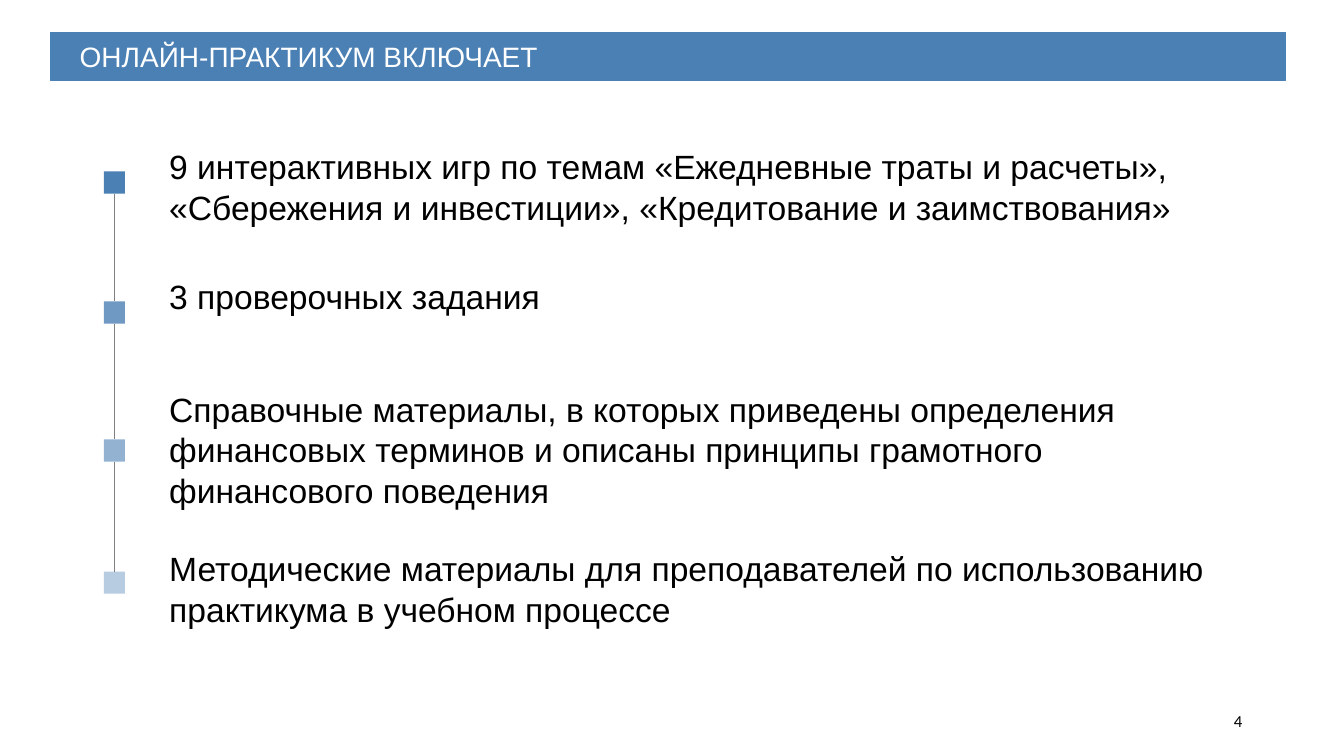
from lxml import etree
from pptx import Presentation
from pptx.dml.color import RGBColor
from pptx.enum.shapes import MSO_CONNECTOR, MSO_SHAPE
from pptx.enum.text import MSO_ANCHOR, MSO_AUTO_SIZE, PP_ALIGN
from pptx.oxml.ns import qn
from pptx.util import Inches, Pt

BLUE = RGBColor(0x4B, 0x80, 0xB5)
GRAY = RGBColor(0x80, 0x80, 0x80)
WHITE = RGBColor(0xFF, 0xFF, 0xFF)
BLACK = RGBColor(0, 0, 0)

RECTANGLE = MSO_SHAPE.RECTANGLE
STRAIGHT = MSO_CONNECTOR.STRAIGHT
LEFT, RIGHT = PP_ALIGN.LEFT, PP_ALIGN.RIGHT
TOP, MIDDLE = MSO_ANCHOR.TOP, MSO_ANCHOR.MIDDLE
NO_AUTOFIT = MSO_AUTO_SIZE.NONE
TITLE_ONLY_LAYOUT = 5
TOP_SIDE, BOTTOM_SIDE = 0, 2

MARKER_WIDTH, MARKER_HEIGHT = 0.21, 0.22
TEXT_OFFSET = 0.55

# Marker top, text top, text height, marker opacity in percent, wording
ITEMS = [
    (1.7, 1.4, 0.91, 100,
     "9 интерактивных игр по темам «Ежедневные траты и расчеты», "
     "«Сбережения и инвестиции», «Кредитование и заимствования»"),
    (2.99, 2.69, 0.5, 80, "3 проверочных задания"),
    (4.36, 3.81, 1.31, 60,
     "Справочные материалы, в которых приведены определения финансовых "
     "терминов и описаны принципы грамотного финансового поведения"),
    (5.67, 5.39, 0.91, 40,
     "Методические материалы для преподавателей по использованию "
     "практикума в учебном процессе"),
]


def write_text(shape, text, size, color, font="Arial", align=LEFT, anchor=TOP):
    frame = shape.text_frame
    frame.word_wrap = True
    frame.auto_size = NO_AUTOFIT
    frame.vertical_anchor = anchor
    paragraph = frame.paragraphs[0]
    paragraph.alignment = align
    paragraph.line_spacing = 1.0
    run = paragraph.add_run()
    run.text = text
    run.font.name = font
    run.font.size = Pt(size)
    run.font.color.rgb = color


def add_title_bar(slide, left, top, width, height):
    title = slide.shapes.title
    title.left, title.top = Inches(left), Inches(top)
    title.width, title.height = Inches(width), Inches(height)
    title.fill.solid()
    title.fill.fore_color.rgb = BLUE
    title.line.color.rgb = BLUE
    title.line.width = Pt(1)
    write_text(title, "ОНЛАЙН-ПРАКТИКУМ ВКЛЮЧАЕТ", 20, WHITE, anchor=MIDDLE)
    title.text_frame.margin_left = Inches(0.29)


def add_marker(slide, left, top, opacity):
    marker = slide.shapes.add_shape(
        RECTANGLE, Inches(left), Inches(top),
        Inches(MARKER_WIDTH), Inches(MARKER_HEIGHT))
    marker.shadow.inherit = False
    marker.fill.solid()
    marker.fill.fore_color.rgb = BLUE
    marker.line.fill.background()
    if opacity < 100:
        color = marker.fill._xPr.find(f"{qn('a:solidFill')}/{qn('a:srgbClr')}")
        etree.SubElement(color, qn("a:alpha"), val=str(opacity * 1000))
    return marker


def join_markers(slide, upper, lower):
    connector = slide.shapes.add_connector(STRAIGHT, 0, 0, 0, 0)
    connector.begin_connect(upper, BOTTOM_SIDE)
    connector.end_connect(lower, TOP_SIDE)
    connector.line.color.rgb = GRAY
    connector.line.width = Pt(0.5)
    etree.SubElement(connector._element.spPr, qn("a:effectLst"))


def add_contents(slide, left, width):
    markers = []
    for marker_top, text_top, text_height, opacity, text in ITEMS:
        markers.append(add_marker(slide, left, marker_top, opacity))
        box = slide.shapes.add_textbox(
            Inches(left + TEXT_OFFSET), Inches(text_top),
            Inches(width - TEXT_OFFSET), Inches(text_height))
        write_text(box, text, 24, BLACK)
    for upper, lower in zip(markers, markers[1:]):
        join_markers(slide, upper, lower)


def add_page_number(slide, left, top, width, height):
    box = slide.shapes.add_textbox(
        Inches(left), Inches(top), Inches(width), Inches(height))
    write_text(box, "4", 12, BLACK, "Calibri", RIGHT, MIDDLE)


def main():
    presentation = Presentation()
    presentation.slide_width = Inches(13.33)
    presentation.slide_height = Inches(7.5)
    layout = presentation.slide_layouts[TITLE_ONLY_LAYOUT]
    slide = presentation.slides.add_slide(layout)

    # Heading bar
    add_title_bar(slide, 0.5, 0.32, 12.25, 0.48)
    # Timeline of markers with its texts
    add_contents(slide, 1.03, 11.3)
    # Page number
    add_page_number(slide, 9.42, 6.95, 3, 0.4)

    presentation.save("out.pptx")


if __name__ == "__main__":
    main()
